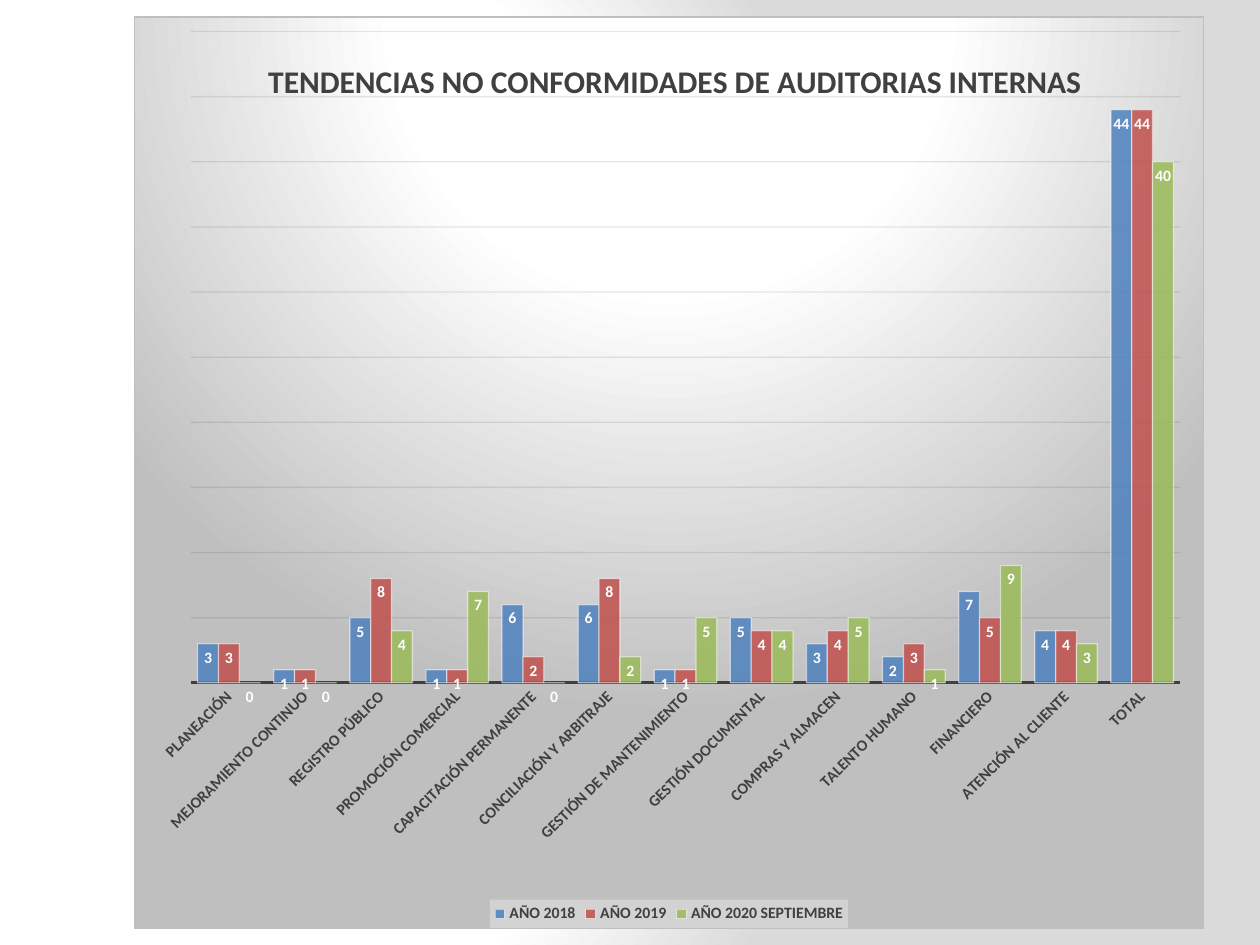
from lxml.etree import SubElement
from pptx import Presentation
from pptx.chart.data import CategoryChartData
from pptx.dml.color import RGBColor
from pptx.enum.chart import XL_CHART_TYPE, XL_LABEL_POSITION, XL_LEGEND_POSITION, XL_TICK_MARK
from pptx.oxml import parse_xml
from pptx.oxml.ns import nsdecls, qn
from pptx.util import Inches, Pt

FONT = "Calibri"
DARK = "404040"
SILVER = "BFBFBF"
WHITE = "FFFFFF"
CATEGORIES = [
    "PLANEACIÓN", "MEJORAMIENTO CONTINUO", "REGISTRO PÚBLICO",
    "PROMOCIÓN COMERCIAL", "CAPACITACIÓN PERMANENTE",
    "CONCILIACIÓN Y ARBITRAJE", "GESTIÓN DE MANTENIMIENTO",
    "GESTIÓN DOCUMENTAL", "COMPRAS Y ALMACEN", "TALENTO HUMANO",
    "FINANCIERO", "ATENCIÓN AL CLIENTE", "TOTAL",
]
SERIES = [
    ("AÑO 2018", "4F81BD", [3, 1, 5, 1, 6, 6, 1, 5, 3, 2, 7, 4, 44]),
    ("AÑO 2019", "C0504D", [3, 1, 8, 1, 2, 8, 1, 4, 4, 3, 5, 4, 44]),
    ("AÑO 2020 SEPTIEMBRE", "9BBB59", [0, 0, 4, 7, 0, 2, 5, 4, 5, 1, 9, 3, 40]),
]


def rgb(value):
    return RGBColor.from_string(value)


def format_font(font, size=9, color=DARK, bold=True):
    font.name = FONT
    font.size = Pt(size)
    font.bold = bold
    font.color.rgb = rgb(color)


def format_line(line, color, width=0.75):
    line.color.rgb = rgb(color)
    line.width = Pt(width)


def set_alpha(element, xpath, percent):
    """Make every RGB colour found by the xpath partly transparent."""
    for color in element.xpath(xpath):
        SubElement(color, qn("a:alpha"), val=str(percent * 1000))


def radial_gradient(stops, focus):
    """Return circular gradient XML; focus is left, top, right, bottom in percent."""
    stop_xml = "".join(
        f'<a:gs pos="{position * 1000}"><a:srgbClr val="{color}"/></a:gs>'
        for position, color in stops
    )
    sides = " ".join(f'{side}="{value * 1000}"' for side, value in zip("ltrb", focus))
    return (
        f'<a:gradFill {nsdecls("a")} rotWithShape="1"><a:gsLst>{stop_xml}</a:gsLst>'
        f'<a:path path="circle"><a:fillToRect {sides}/></a:path></a:gradFill>'
    )


def add_box_format(parent, content):
    """Insert fill and line XML just before the text properties of a chart part."""
    text_properties = parent.find(qn("c:txPr"))
    text_properties.addprevious(
        parse_xml(f'<c:spPr {nsdecls("c", "a")}>{content}</c:spPr>')
    )


def set_layout(parent, index, inner=False, **fractions):
    for layout in parent.findall(qn("c:layout")):
        parent.remove(layout)
    target = '<c:layoutTarget val="inner"/>' if inner else ""
    modes = "".join(f'<c:{axis}Mode val="edge"/>' for axis in "xy")
    values = "".join(f'<c:{name} val="{value}"/>' for name, value in fractions.items())
    parent.insert(index, parse_xml(
        f'<c:layout {nsdecls("c")}><c:manualLayout>{target}{modes}{values}'
        "</c:manualLayout></c:layout>"
    ))


def set_background(slide):
    slide.background.fill.solid()
    solid = slide.element.xpath(".//p:bgPr/a:solidFill")[0]
    gradient = radial_gradient([(0, WHITE), (75, WHITE), (100, "DADADA")], (20, 50, 100, 50))
    solid.getparent().replace(solid, parse_xml(gradient))


def add_audit_chart(slide):
    data = CategoryChartData()
    data.categories = CATEGORIES
    for name, _, values in SERIES:
        data.add_series(name, values)
    chart = slide.shapes.add_chart(
        XL_CHART_TYPE.COLUMN_CLUSTERED,
        Inches(1.06), Inches(0.13), Inches(8.5), Inches(7.24), data,
    ).chart
    format_font(chart.font, size=10, color="000000", bold=False)
    gradient = radial_gradient([(0, WHITE), (39, WHITE), (100, SILVER)], (50, -80, 50, 180))
    border = f'<a:ln w="9525"><a:solidFill><a:srgbClr val="{SILVER}"/></a:solidFill></a:ln>'
    add_box_format(chart.element, gradient + border)
    return chart


def format_title(chart):
    chart.has_title = True
    paragraph = chart.chart_title.text_frame.paragraphs[0]
    run = paragraph.add_run()
    run.text = "TENDENCIAS NO CONFORMIDADES DE AUDITORIAS INTERNAS"
    format_font(run.font, size=18)
    set_layout(chart.element.xpath("./c:chart/c:title")[0], 1, x=0.12, y=0.04)


def format_series(chart):
    plot = chart.plots[0]
    plot.gap_width = 65
    plot.overlap = 0
    plot.vary_by_categories = False
    for series, (_, color, _) in zip(plot.series, SERIES):
        series.format.fill.solid()
        series.format.fill.fore_color.rgb = rgb(color)
        format_line(series.format.line, WHITE)
        labels = series.data_labels
        labels.show_value = True
        labels.position = XL_LABEL_POSITION.INSIDE_END
        format_font(labels.font, color=WHITE)
    set_alpha(chart.element, ".//c:ser/c:spPr/a:solidFill/a:srgbClr", 85)
    set_alpha(chart.element, ".//c:ser/c:spPr/a:ln/a:solidFill/a:srgbClr", 50)


def format_axes(chart):
    category_axis = chart.category_axis
    category_axis.major_tick_mark = XL_TICK_MARK.NONE
    category_axis.minor_tick_mark = XL_TICK_MARK.NONE
    format_font(category_axis.tick_labels.font)
    format_line(category_axis.format.line, DARK, 1.5)
    chart.element.xpath(".//c:catAx/c:txPr/a:bodyPr")[0].set("rot", "-2700000")

    value_axis = chart.value_axis
    value_axis.visible = False
    value_axis.minimum_scale = 0
    value_axis.maximum_scale = 50
    value_axis.major_unit = 5
    value_axis.has_major_gridlines = True
    format_line(value_axis.major_gridlines.format.line, "0D0D0D")
    set_alpha(chart.element, ".//c:majorGridlines//a:srgbClr", 10)
    set_layout(chart.element.xpath(".//c:plotArea")[0], 0, inner=True,
               x=0.053, y=0.016, w=0.925, h=0.715)


def format_legend(chart):
    chart.has_legend = True
    chart.legend.position = XL_LEGEND_POSITION.BOTTOM
    chart.legend.include_in_layout = False
    format_font(chart.legend.font)
    legend = chart.element.xpath("./c:chart/c:legend")[0]
    add_box_format(legend, '<a:solidFill><a:srgbClr val="F2F2F2"/></a:solidFill>')
    set_alpha(legend, "./c:spPr/a:solidFill/a:srgbClr", 39)


def main():
    presentation = Presentation()
    presentation.slide_width = Inches(10)
    presentation.slide_height = Inches(7.5)
    slide = presentation.slides.add_slide(presentation.slide_layouts[6])
    set_background(slide)
    chart = add_audit_chart(slide)
    format_title(chart)
    format_series(chart)
    format_axes(chart)
    format_legend(chart)
    presentation.save("out.pptx")


if __name__ == "__main__":
    main()
